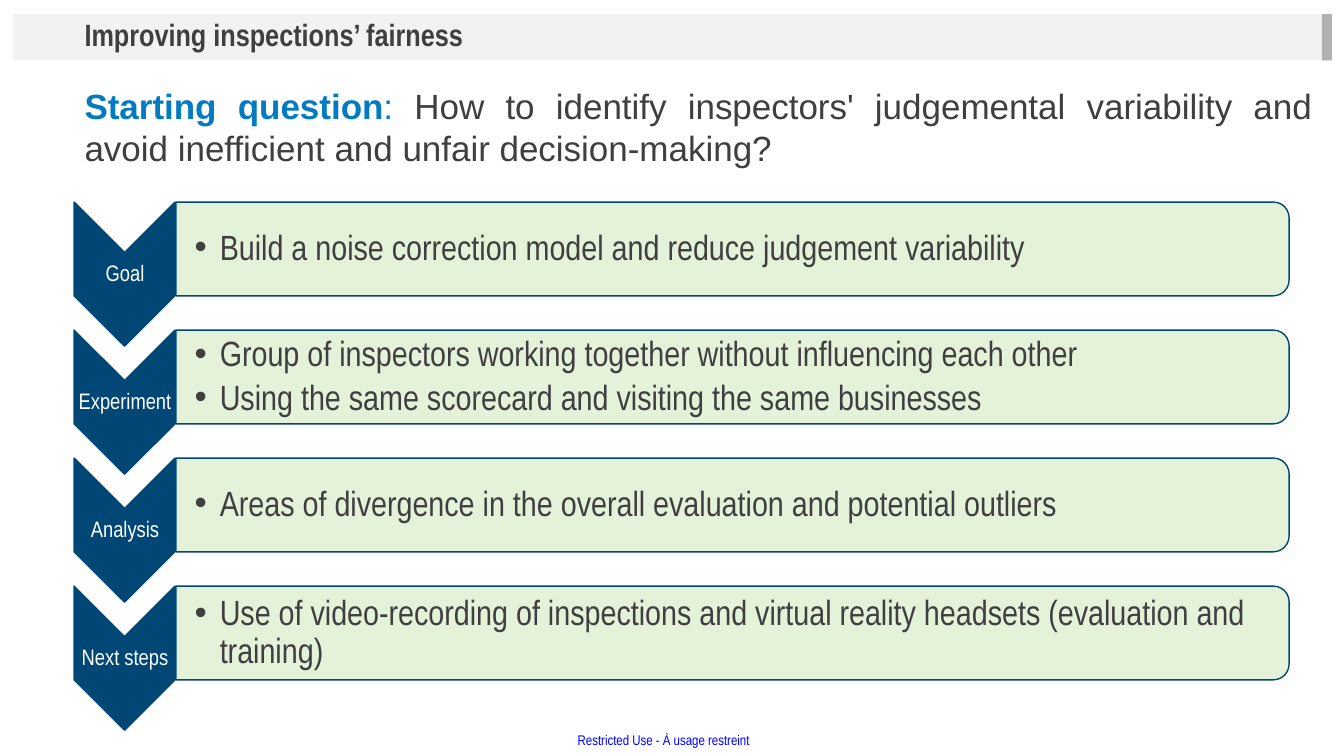
from lxml import etree
from pptx import Presentation
from pptx.dml.color import RGBColor
from pptx.enum.shapes import MSO_SHAPE
from pptx.enum.text import MSO_ANCHOR, PP_ALIGN
from pptx.oxml.ns import qn
from pptx.util import Inches, Pt

RECTANGLE = MSO_SHAPE.RECTANGLE
CHEVRON = MSO_SHAPE.CHEVRON
ROUNDED_TOP = MSO_SHAPE.ROUND_2_SAME_RECTANGLE
MIDDLE = MSO_ANCHOR.MIDDLE
TOP = MSO_ANCHOR.TOP
LEFT = PP_ALIGN.LEFT
CENTER = PP_ALIGN.CENTER
JUSTIFY = PP_ALIGN.JUSTIFY

COLORS = {
    "band": "F2F2F2",
    "band_end": "B2B2B2",
    "navy": "004775",
    "green": "E2F1D7",
    "text": "3F3F3F",
    "accent": "047BC1",
    "white": "FFFFFF",
    "notice": "0000FF",
}
NARROW = "Arial Narrow"
STAGE_PITCH = 1.27
STAGES = [
    ("Goal", ["Build a noise correction model and reduce judgement variability"]),
    ("Experiment", [
        "Group of inspectors working together without influencing each other",
        "Using the same scorecard and visiting the same businesses",
    ]),
    ("Analysis", ["Areas of divergence in the overall evaluation and potential outliers"]),
    ("Next steps", [
        "Use of video-recording of inspections and virtual reality headsets "
        "(evaluation and training)",
    ]),
]


def color(name):
    return RGBColor.from_string(COLORS[name])


def add_block(slide, kind, box, fill, line=None, rotation=0):
    block = slide.shapes.add_shape(kind, *map(Inches, box))
    block.shadow.inherit = False
    block.rotation = rotation
    block.fill.solid()
    block.fill.fore_color.rgb = color(fill)
    if line:
        block.line.color.rgb = color(line)
        block.line.width = Pt(1)
    else:
        block.line.fill.background()
    return block


def set_opacity(block, percent):
    tint = block.fill._xPr.find(qn("a:solidFill"))[0]
    etree.SubElement(tint, qn("a:alpha"), val=str(percent * 1000))


def add_frame(slide, box, insets=(0.1, 0.05, 0.1, 0.05), anchor=TOP):
    frame = slide.shapes.add_textbox(*map(Inches, box)).text_frame
    frame.word_wrap = True
    frame.vertical_anchor = anchor
    (frame.margin_left, frame.margin_top,
     frame.margin_right, frame.margin_bottom) = map(Inches, insets)
    return frame


def format_paragraph(paragraph, align=LEFT, spacing=1.0):
    paragraph.alignment = align
    paragraph.line_spacing = spacing


def add_run(paragraph, text, size, ink, font=NARROW, bold=False):
    run = paragraph.add_run()
    run.text = text
    run.font.size = Pt(size)
    run.font.name = font
    run.font.bold = bold
    run.font.color.rgb = color(ink)


def add_bullet(paragraph):
    properties = paragraph._p.get_or_add_pPr()
    properties.set("marL", str(Inches(0.25)))
    properties.set("indent", str(-Inches(0.25)))
    etree.SubElement(properties, qn("a:buFont"), typeface="Arial")
    etree.SubElement(properties, qn("a:buChar"), char="•")


def add_header(slide):
    add_block(slide, RECTANGLE, (0.13, 0.14, 13.08, 0.46), "band")
    add_block(slide, RECTANGLE, (13.11, 0.14, 0.1, 0.46), "band_end")
    title = add_frame(slide, (0.74, 0.15, 12.37, 0.46)).paragraphs[0]
    format_paragraph(title, spacing=0.9)
    add_run(title, "Improving inspections’ fairness", 22, "text", bold=True)


def add_question(slide):
    question = add_frame(slide, (0.74, 0.79, 12.37, 0.94)).paragraphs[0]
    format_paragraph(question, JUSTIFY)
    add_run(question, "Starting question", 25, "accent", "Arial", True)
    add_run(question, ": ", 25, "accent", "Arial")
    add_run(question, "How to identify inspectors' judgemental variability and "
            "avoid inefficient and unfair decision-making?", 25, "text", "Arial")


def add_stage(slide, offset, name, points):
    add_block(slide, CHEVRON, (0.52, 2.22 + offset, 1.43, 1), "navy", "navy", 90)
    label = add_frame(slide, (0.74, 2.51 + offset, 1, 0.43), (0.01,) * 4, MIDDLE).paragraphs[0]
    format_paragraph(label, CENTER, 0.9)
    add_run(label, name, 16, "white")

    panel = add_block(slide, ROUNDED_TOP, (6.8, -3.05 + offset, 0.93, 11.04),
                      "green", "navy", 90)
    set_opacity(panel, 90)
    details = add_frame(slide, (1.74, 2.05 + offset, 11, 0.84),
                        (0.19, 0.02, 0.02, 0.02), MIDDLE)
    for index, point in enumerate(points):
        paragraph = details.add_paragraph() if index else details.paragraphs[0]
        add_bullet(paragraph)
        format_paragraph(paragraph, spacing=0.9)
        paragraph.space_after = Pt(4)
        add_run(paragraph, point, 25, "text")


def add_notice(slide):
    notice = add_frame(slide, (5.73, 7.26, 1.91, 0.17), (0,) * 4).paragraphs[0]
    format_paragraph(notice)
    add_run(notice, "Restricted Use - À usage restreint", 10, "notice")


def main():
    deck = Presentation()
    deck.slide_width = Inches(13.33)
    deck.slide_height = Inches(7.5)
    slide = deck.slides.add_slide(deck.slide_layouts[6])
    add_header(slide)
    add_notice(slide)
    for index, (name, points) in enumerate(STAGES):
        add_stage(slide, index * STAGE_PITCH, name, points)
    add_question(slide)
    deck.save("out.pptx")


if __name__ == "__main__":
    main()
